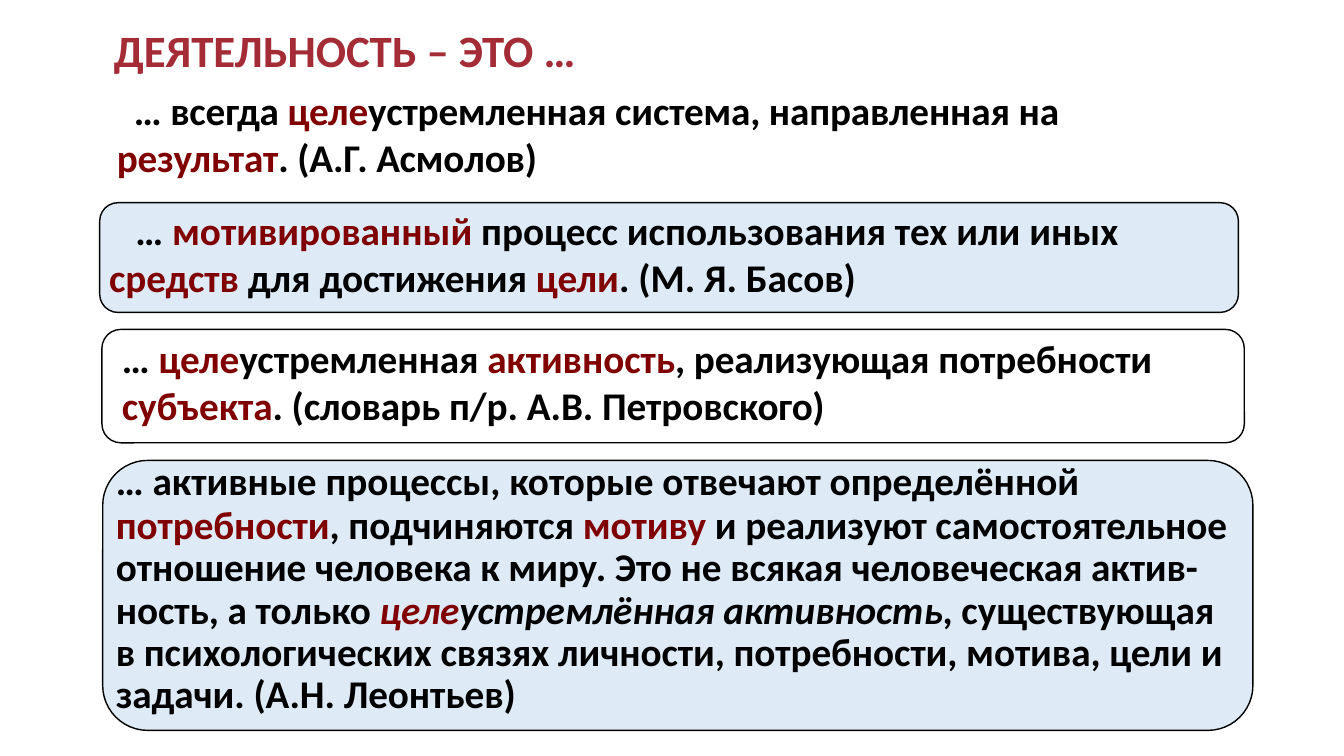
from pptx import Presentation
from pptx.dml.color import RGBColor
from pptx.enum.shapes import MSO_SHAPE
from pptx.enum.text import MSO_ANCHOR
from pptx.util import Pt

COLORS = {"title": "A42C36", "key": "800000", "text": "000000",
          "pale": "DEEBF7", "outline": "000000"}
FRAME = {"margin_left": 0, "margin_right": 0, "margin_bottom": 0,
         "margin_top": Pt(0.7), "vertical_anchor": MSO_ANCHOR.TOP}
HEADING = {"name": "Calibri", "size": Pt(32), "bold": True}
BODY = {"name": "Calibri", "size": Pt(28), "bold": True}


def add_text(left, top, width, height, wrap):
    frame = slide.shapes.add_textbox(Pt(left), Pt(top), Pt(width), Pt(height)).text_frame
    frame.word_wrap = wrap
    for name, value in FRAME.items():
        setattr(frame, name, value)
    return frame


def add_run(paragraph, text, color, tracking, **style):
    run = paragraph.add_run()
    run.text = text
    for name, value in style.items():
        setattr(run.font, name, value)
    run.font.color.rgb = RGBColor.from_string(COLORS[color])
    run.font._element.set("spc", str(tracking))


deck = Presentation()
deck.slide_width, deck.slide_height = Pt(960), Pt(540)
slide = deck.slides.add_slide(deck.slide_layouts[6])

# Rounded frames behind the definitions: left, top, width, height, fill
frames = [
    (71.2, 144.8, 813.4, 78.4, "pale"),
    (72.8, 235.3, 816, 81, None),
    (73.4, 328.9, 821.6, 192.8, "pale"),
]
for left, top, width, height, fill in frames:
    card = slide.shapes.add_shape(MSO_SHAPE.ROUNDED_RECTANGLE,
                                  Pt(left), Pt(top), Pt(width), Pt(height))
    card.shadow.inherit = False
    if fill:
        card.fill.solid()
        card.fill.fore_color.rgb = RGBColor.from_string(COLORS[fill])
    else:
        card.fill.background()
    card.line.color.rgb = RGBColor.from_string(COLORS["outline"])
    card.line.width = Pt(1)

# Title
title = add_text(81.4, 15.6, 332, 40, False)
add_run(title.paragraphs[0], "ДЕЯТЕЛЬНОСТЬ – ЭТО …", "title", -5, **HEADING)

# Definitions: left, first-line and right indents, space before, line spacing,
# tracking, text; asterisks enclose key words, underscores enclose italics
definitions = [
    (6.5, 12.2, 40, 0, 1.0, -10,
     "… всегда *целе*устремленная система, направленная на "
     "*результат*. (А.Г. Асмолов)"),
    (1, 18.7, 40, 18.4, 1.0, 0,
     "… *мотивированный* процесс использования тех или иных "
     "*средств* для достижения *цели*. (М. Я. Басов)"),
    (10.1, 0, 40, 24.3, 1.0, -5,
     "… *целе*устремленная *активность*, реализующая потребности "
     "*субъекта*. (словарь п/р. А.В. Петровского)"),
    (5.8, 0, 3, 21.4, Pt(31.9), 0,
     "… активные процессы, которые отвечают определённой"),
    (5.8, 0, 3, 1.6, 0.9, -5,
     "*потребности*, подчиняются *мотиву* и реализуют самостоятельное "
     "отношение человека к миру. Это не всякая человеческая актив- "
     "ность, а только _*целе*устремлённая активность_, существующая "
     "в психологических связях личности, потребности, мотива, цели и "
     "задачи. (А.Н. Леонтьев)"),
]
definitions_frame = add_text(77, 61.2, 803.5, 453, True)
for index, definition in enumerate(definitions):
    left, first, right, before, spacing, tracking, text = definition
    paragraph = (definitions_frame.add_paragraph() if index
                 else definitions_frame.paragraphs[0])
    indents = {"marL": left, "indent": first, "marR": right}
    for name, value in indents.items():
        paragraph._p.get_or_add_pPr().set(name, str(Pt(value)))
    paragraph.space_before = Pt(before)
    paragraph.line_spacing = spacing
    for phrase_number, phrase in enumerate(text.split("_")):
        for part_number, part in enumerate(phrase.split("*")):
            if part:
                add_run(paragraph, part, "key" if part_number % 2 else "text",
                        tracking, italic=phrase_number % 2 == 1, **BODY)

deck.save("out.pptx")
